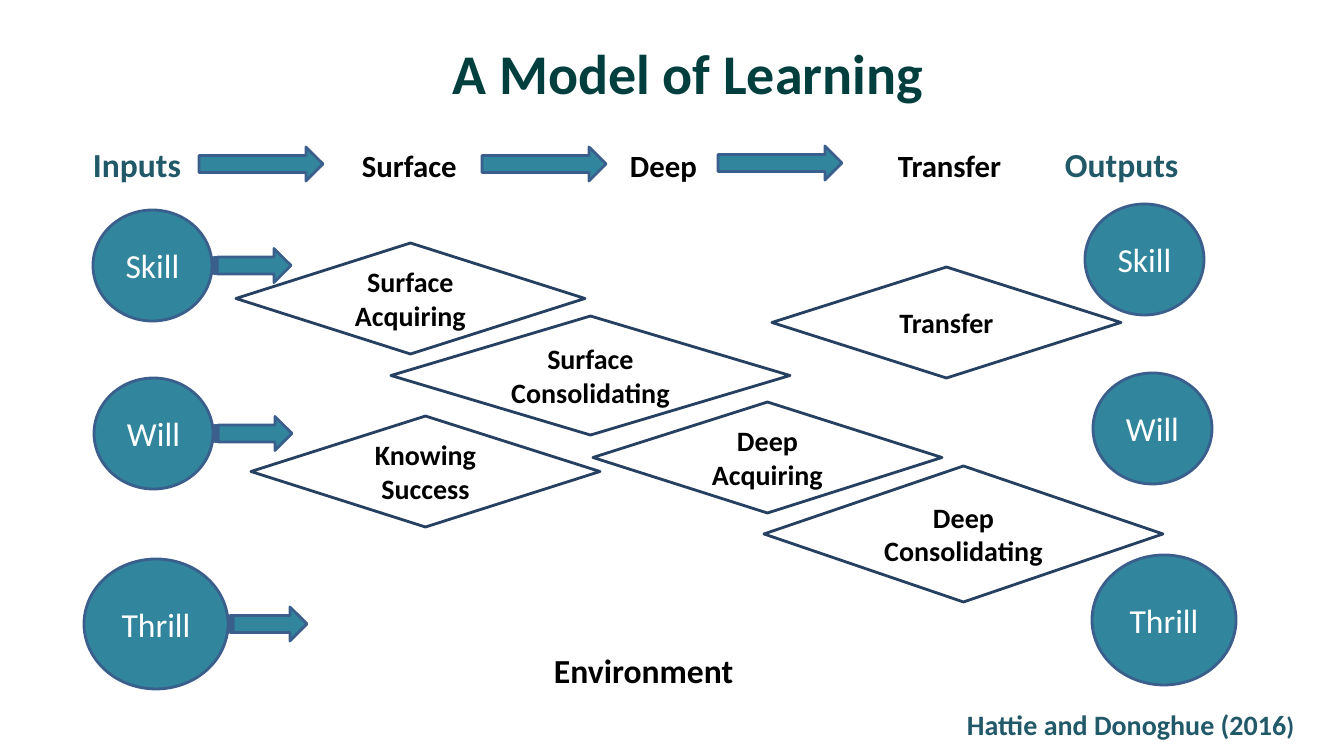
"""Build the slide "A Model of Learning": inputs, learning phases and outputs."""
from dataclasses import dataclass

from pptx import Presentation
from pptx.dml.color import RGBColor
from pptx.enum.shapes import MSO_SHAPE as Shape
from pptx.enum.text import MSO_ANCHOR as Anchor, PP_ALIGN as Align
from pptx.util import Emu, Pt

TITLE = "A Model of Learning"
SETTING = "Environment"
CITATION = ("Hattie and Donoghue (2016", ")")
STAGES = [("Inputs", 93), ("Surface", 362), ("Deep", 630),
          ("Transfer", 898), ("Outputs", 1065)]
STAGE_ARROWS = [(199, 147), (482, 147), (718, 146)]
INPUTS = [("Skill", 93, 210), ("Will", 94, 378), ("Thrill", 84, 559)]
OUTPUTS = [("Skill", 1085, 204), ("Will", 1093, 373), ("Thrill", 1092, 555)]
PHASES = [
    ("Surface Consolidating", 391, 316, 399, 119),
    ("Deep Acquiring", 593, 402, 349, 111),
    ("Knowing Success", 251, 416, 349, 111),
    ("Deep Consolidating", 764, 466, 399, 136),
    ("Transfer", 772, 267, 349, 111),
    ("Surface Acquiring", 236, 243, 349, 111),
]
DISC, LARGE_DISC = (119, 111), (144, 130)
INPUT_ARROW, STAGE_ARROW = (79, 34), (124, 34)


@dataclass(frozen=True)
class Theme:
    font: str = "Calibri"
    heading: str = "003F3E"
    accent: str = "215968"
    teal: str = "31859C"
    teal_edge: str = "3A5F8C"
    phase_edge: str = "254061"
    white: str = "FFFFFF"
    black: str = "000000"
    title_size: int = 40
    large: int = 24
    stage_size: int = 22
    phase_size: int = 20
    small: int = 18
    edge_width: int = 2


THEME = Theme()


def px(length):
    return Emu(round(length * 914400 / 100.8))


def write(holder, text, *, size, color, bold=True, align=Align.LEFT, anchor=Anchor.MIDDLE):
    frame = holder.text_frame
    frame.word_wrap = True
    frame.vertical_anchor = anchor
    paragraph = frame.paragraphs[0]
    paragraph.alignment = align
    run = paragraph.add_run()
    run.text = text
    run.font.name = THEME.font
    run.font.size = Pt(size)
    run.font.bold = bold
    run.font.color.rgb = RGBColor.from_string(color)


def add_label(slide, left, top, width, height):
    label = slide.shapes.add_textbox(px(left), px(top), px(width), px(height))
    label.text_frame.margin_left = label.text_frame.margin_right = 0
    return label


def add_figure(slide, kind, left, top, width, height, fill=THEME.teal, edge=THEME.teal_edge):
    figure = slide.shapes.add_shape(kind, px(left), px(top), px(width), px(height))
    figure.shadow.inherit = False
    figure.fill.solid()
    figure.fill.fore_color.rgb = RGBColor.from_string(fill)
    figure.line.color.rgb = RGBColor.from_string(edge)
    figure.line.width = Pt(THEME.edge_width)
    return figure


def add_disc(slide, name, left, top):
    width, height = LARGE_DISC if name == "Thrill" else DISC
    disc = add_figure(slide, Shape.FLOWCHART_CONNECTOR, left, top, width, height)
    write(disc, name, size=THEME.large, color=THEME.white, bold=False, align=Align.CENTER)
    return left + width, top + height / 2


def main():
    deck = Presentation()
    deck.slide_width, deck.slide_height = px(1344), px(756)
    slide = deck.slides.add_slide(deck.slide_layouts[6])

    write(add_label(slide, 214, 32, 948, 81), TITLE,
          size=THEME.title_size, color=THEME.heading, align=Align.CENTER)

    arrow_starts = [add_disc(slide, *entry) for entry in INPUTS]
    for entry in OUTPUTS:
        add_disc(slide, *entry)

    for name, *box in PHASES:
        phase = add_figure(slide, Shape.FLOWCHART_DECISION, *box,
                           fill=THEME.white, edge=THEME.phase_edge)
        write(phase, name, size=THEME.phase_size, color=THEME.black, align=Align.CENTER)

    write(add_label(slide, 554, 645, 200, 50), SETTING,
          size=THEME.large, color=THEME.black)

    for name, left in STAGES:
        is_end = name in ("Inputs", "Outputs")
        write(add_label(slide, left, 139, 150, 50), name,
              size=THEME.large if is_end else THEME.stage_size,
              color=THEME.accent if is_end else THEME.black, anchor=Anchor.BOTTOM)

    for left, middle in arrow_starts:
        add_figure(slide, Shape.STRIPED_RIGHT_ARROW, left,
                   middle - INPUT_ARROW[1] / 2, *INPUT_ARROW)
    for left, top in STAGE_ARROWS:
        add_figure(slide, Shape.RIGHT_ARROW, left, top, *STAGE_ARROW)

    citation = add_label(slide, 967, 702, 347, 44)
    for text, size in zip(CITATION, (THEME.phase_size, THEME.small)):
        write(citation, text, size=size, color=THEME.accent)

    deck.save("out.pptx")


if __name__ == "__main__":
    main()
